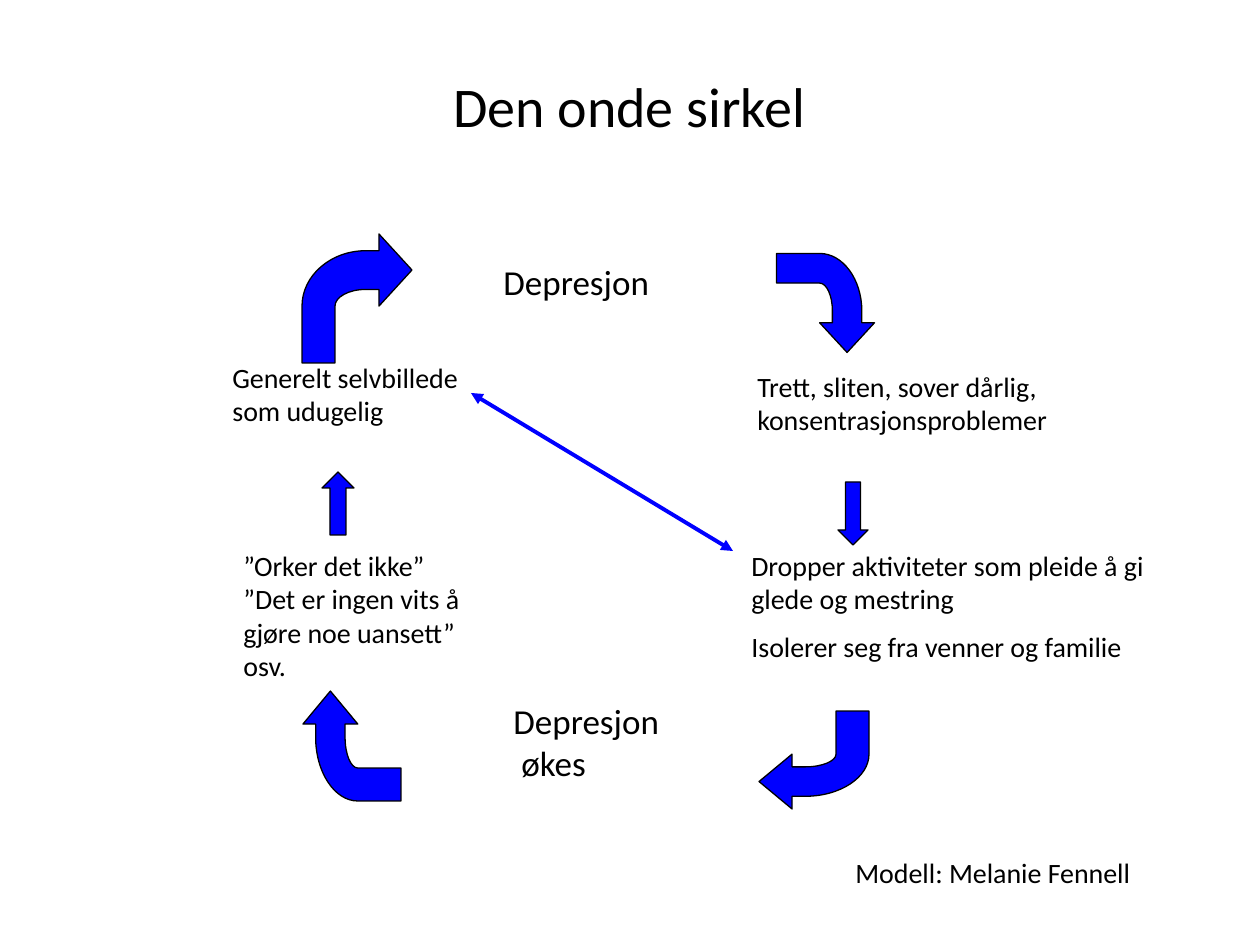
from typing import NamedTuple

from pptx import Presentation
from pptx.dml.color import RGBColor
from pptx.enum.shapes import MSO_CONNECTOR as CONN, MSO_SHAPE as SHAPE
from pptx.enum.text import MSO_ANCHOR as ANCHOR, MSO_AUTO_SIZE as FIT, PP_ALIGN as ALIGN
from pptx.oxml import parse_xml
from pptx.oxml.ns import nsdecls
from pptx.util import Emu, Pt

SCALE = 914400 / 126
FONT = "Calibri"
BLACK, BLUE = "000000", "0000FF"
ROUNDNESS = 0.55


class Box(NamedTuple):
    x: int
    y: int
    w: int
    h: int


class Label(NamedTuple):
    box: Box
    lines: list[str]
    size: int = 16
    gap: int = 0


class Bend(NamedTuple):
    box: Box
    angle: int


class Arrow(NamedTuple):
    box: Box
    kind: SHAPE


class Curve(NamedTuple):
    start: tuple[float, float]
    corner: tuple[float, float]
    end: tuple[float, float]


LABELS = [
    Label(Box(491, 254, 238, 56), ["Depresjon"], 20),
    Label(Box(739, 542, 477, 165), ["Dropper aktiviteter som pleide å gi glede og mestring",
                                    "Isolerer seg fra venner og familie"], gap=8),
    Label(Box(745, 363, 391, 81), ["Trett, sliten, sover dårlig, konsentrasjonsproblemer"]),
    Label(Box(501, 693, 266, 97), ["Depresjon", " økes"], 20),
    Label(Box(231, 542, 269, 149), ["”Orker det ikke”",
                                    "”Det er ingen vits å gjøre noe uansett” osv."]),
    Label(Box(220, 354, 302, 81), ["Generelt selvbillede som udugelig"]),
    Label(Box(843, 849, 343, 47), ["Modell: Melanie Fennell"]),
]
BENDS = [
    Bend(Box(776, 254, 99, 98), 90),
    Bend(Box(759, 711, 110, 98), 180),
    Bend(Box(297, 697, 110, 98), 270),
    Bend(Box(302, 234, 110, 129), 0),
]
ARROWS = [
    Arrow(Box(322, 472, 32, 63), SHAPE.UP_ARROW),
    Arrow(Box(838, 482, 30, 63), SHAPE.DOWN_ARROW),
]
NECK, TURN_X, TURN_Y, SHAFT = 0.7, 0.58, 0.56, 0.3
OUTER_Y, INNER_Y = 0.13, 0.43
OUTLINE = [
    (1, 0.28), (NECK, 0), (NECK, OUTER_Y), (TURN_X, OUTER_Y), (0, TURN_Y), (0, 1),
    (SHAFT, 1), (SHAFT, TURN_Y), (TURN_X, INNER_Y), (NECK, INNER_Y), (NECK, TURN_Y),
]
CURVES = {
    3: Curve((TURN_X, OUTER_Y), (0, OUTER_Y), (0, TURN_Y)),
    7: Curve((SHAFT, TURN_Y), (SHAFT, INNER_Y), (TURN_X, INNER_Y)),
}


def px(n: float) -> Emu:
    """Turn px into EMU."""
    return Emu(round(n * SCALE))


def color(hex_code: str) -> RGBColor:
    """Turn a hex string into a colour."""
    return RGBColor.from_string(hex_code)


def add_run(p, text: str, size: int) -> None:
    """Add one formatted run to a paragraph."""
    r = p.add_run()
    r.text = text
    r.font.name, r.font.size = FONT, Pt(size)
    r.font.color.rgb = color(BLACK)


def paint(s) -> None:
    """Give a shape its blue fill and thin black outline."""
    s.shadow.inherit = False
    s.fill.solid()
    s.fill.fore_color.rgb = color(BLUE)
    s.line.color.rgb = color(BLACK)
    s.line.width = Pt(0.75)


def add_title(slide, text: str) -> None:
    """Fill the title placeholder."""
    s = slide.shapes.title
    s.left, s.top, s.width, s.height = map(px, Box(94, 56, 1071, 99))
    tf = s.text_frame
    tf.vertical_anchor = ANCHOR.MIDDLE
    p = tf.paragraphs[0]
    p.alignment = ALIGN.CENTER
    add_run(p, text, 32)


def add_label(slide, label: Label) -> None:
    """Add a text box with one paragraph per line."""
    tf = slide.shapes.add_textbox(*map(px, label.box)).text_frame
    tf.word_wrap = True
    tf.auto_size = FIT.SHAPE_TO_FIT_TEXT
    for i, line in enumerate(label.lines):
        p = tf.add_paragraph() if i else tf.paragraphs[0]
        p.space_before = Pt(label.gap if i else 0)
        add_run(p, line, label.size)


def curve_xml(curve: Curve, box: Box):
    """Make a quarter ellipse segment that bends towards its corner."""
    controls = [tuple(a + (c - a) * ROUNDNESS for a, c in zip(end, curve.corner))
                for end in (curve.start, curve.end)]
    pts = "".join(f'<a:pt x="{px(x * box.w)}" y="{px(y * box.h)}"/>'
                  for x, y in (*controls, curve.end))
    return parse_xml(f'<a:cubicBezTo {nsdecls("a")}>{pts}</a:cubicBezTo>')


def add_bend(slide, bend: Bend) -> None:
    """Add a bent arrow, rounded at its turn and rotated."""
    b = bend.box
    points = [(px(b.x + x * b.w), px(b.y + y * b.h)) for x, y in OUTLINE]
    builder = slide.shapes.build_freeform(*points[0])
    builder.add_line_segments(points[1:], close=True)
    s = builder.convert_to_shape()
    segments = s._element.xpath(".//a:lnTo")
    for i, curve in CURVES.items():
        segments[i].getparent().replace(segments[i], curve_xml(curve, b))
    s.rotation = bend.angle
    paint(s)


def add_arrow(slide, arrow: Arrow) -> None:
    """Add a straight block arrow."""
    paint(slide.shapes.add_shape(arrow.kind, *map(px, arrow.box)))


def add_double_arrow(slide, x1: int, y1: int, x2: int, y2: int) -> None:
    """Add a line with an arrowhead at both ends."""
    s = slide.shapes.add_connector(CONN.STRAIGHT, *map(px, (x1, y1, x2, y2)))
    s.line.color.rgb = color(BLUE)
    s.line.width = Pt(2.25)
    ln = s.line._get_or_add_ln()
    for end in ("headEnd", "tailEnd"):
        ln.append(parse_xml(f'<a:{end} {nsdecls("a")} type="triangle"/>'))
    s._element.spPr.append(parse_xml(f'<a:effectLst {nsdecls("a")}/>'))


def main() -> None:
    """Build the slide and save it."""
    prs = Presentation()
    prs.slide_width, prs.slide_height = px(1260), px(945)
    slide = prs.slides.add_slide(prs.slide_layouts[5])
    add_title(slide, "Den onde sirkel")
    for bend in BENDS:
        add_bend(slide, bend)
    for arrow in ARROWS:
        add_arrow(slide, arrow)
    for label in LABELS:
        add_label(slide, label)
    add_double_arrow(slide, 471, 393, 733, 551)
    prs.save("out.pptx")


if __name__ == "__main__":
    main()
